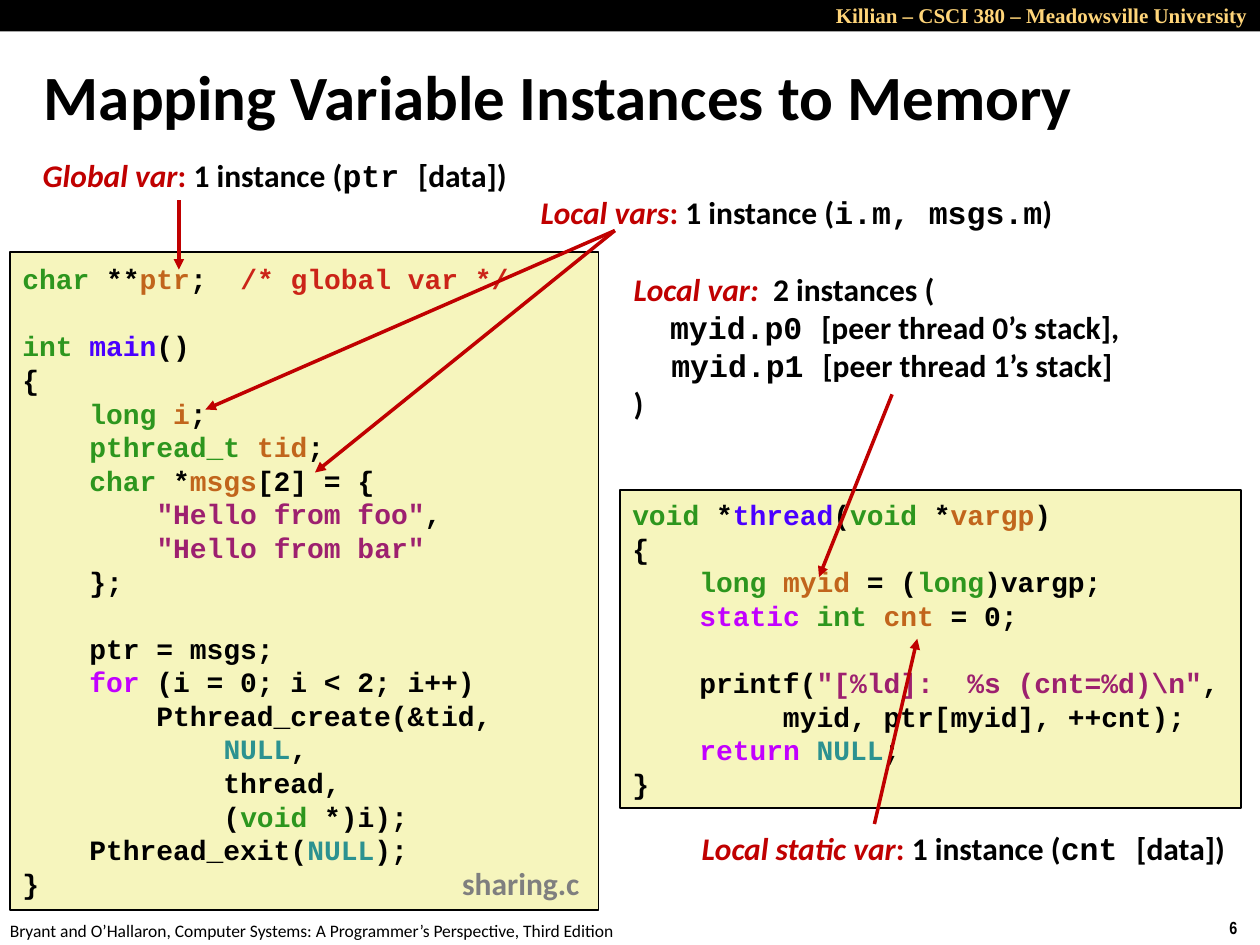
"""Build a slide that maps C variable instances to memory."""
from dataclasses import dataclass
from typing import NamedTuple

import pptx
import pptx.dml.color
import pptx.enum.shapes
import pptx.enum.text
import pptx.oxml.ns
import pptx.util
from lxml import etree

Inches = pptx.util.Inches
Pt = pptx.util.Pt
RGBColor = pptx.dml.color.RGBColor
Align = pptx.enum.text.PP_ALIGN
Anchor = pptx.enum.text.MSO_ANCHOR
qn = pptx.oxml.ns.qn

BLACK = RGBColor(0x00, 0x00, 0x00)
GOLD = RGBColor(0xFF, 0xD5, 0x79)
CREAM = RGBColor(0xF6, 0xF5, 0xBD)
RED = RGBColor(0xC0, 0x00, 0x00)
GRAY = RGBColor(0x7F, 0x7F, 0x7F)
GREEN = RGBColor(0x2D, 0x96, 0x1E)
ORANGE = RGBColor(0xC1, 0x65, 0x1C)
BRICK = RGBColor(0xCB, 0x24, 0x18)
BLUE = RGBColor(0x4A, 0x00, 0xFF)
PLUM = RGBColor(0x9D, 0x20, 0x6F)
VIOLET = RGBColor(0xC2, 0x00, 0xFF)
TEAL = RGBColor(0x2C, 0x92, 0x90)

SANS = "Calibri"
MONO = "Courier New"
CODE_SIZE = 16
CODE_PITCH = 19.2


class Run(NamedTuple):
    text: str
    color: RGBColor = BLACK
    font: str = SANS
    size: float = 18
    bold: bool = True
    slant: bool = False


class Box(NamedTuple):
    left: float
    top: float
    width: float
    height: float


@dataclass
class Line:
    runs: list[Run]
    indent: float = 0
    gap: float = 0


@dataclass
class Label:
    box: Box
    lines: list[Line]
    align: Align = Align.LEFT
    anchor: Anchor = Anchor.TOP
    pad: float = 0.05


@dataclass
class Code:
    box: Box
    lines: list[Line]


class Arrow(NamedTuple):
    x1: float
    y1: float
    x2: float
    y2: float


def code(*parts: str | tuple[str, RGBColor], gap: float = 0) -> Line:
    pairs = [(p, BLACK) if isinstance(p, str) else p for p in parts]
    return Line([Run(t, c, MONO, CODE_SIZE) for t, c in pairs], gap=gap)


def note(box: Box, name: str, start: str, var: str, end: str) -> Label:
    runs = [Run(name, RED, slant=True), Run(": ", RED), Run(start),
            Run(var, font=MONO), Run(end)]
    return Label(box, [Line(runs)], Align.CENTER, Anchor.MIDDLE, 0)


def plain(box: Box, run: Run, align: Align = Align.LEFT,
          anchor: Anchor = Anchor.TOP) -> Label:
    return Label(box, [Line([run])], align, anchor)


LABELS = [
    plain(Box(9.66, 7.23, 0.34, 0.27), Run("6", BLACK, "Arial Narrow", 10)),
    plain(Box(-0.02, 7.25, 5.08, 0.27),
          Run("Bryant and O’Hallaron, Computer Systems: A Programmer’s "
              "Perspective, Third Edition", size=10, bold=False)),
    plain(Box(4.5, -0.03, 5.5, 0.3),
          Run("Killian – CSCI 380 – Meadowsville University", GOLD,
              "Times New Roman", 12), Align.RIGHT),
    plain(Box(0.25, 0.33, 9.75, 0.85),
          Run("Mapping Variable Instances to Memory", size=36),
          anchor=Anchor.MIDDLE),
    note(Box(0.22, 1.24, 3.92, 0.3), "Global var", "1 instance (", "ptr ", "[data])"),
    note(Box(5.44, 6.58, 4.41, 0.3), "Local static var", "1 instance (", "cnt ", "[data])"),
    note(Box(4.17, 1.53, 4.3, 0.3), "Local vars", "1 instance (", "i.m, msgs.m", ")"),
    Label(Box(4.93, 2.14, 4.23, 1.21), [
        Line([Run("Local var:  ", RED, slant=True), Run("2 instances (")]),
        Line([Run("myid.p0 ", font=MONO), Run("[peer thread 0’s stack],")], 0.29),
        Line([Run("myid.p1 ", font=MONO), Run("[peer thread 1’s stack]")], 0.3),
        Line([Run(")")]),
    ], anchor=Anchor.MIDDLE, pad=0),
    plain(Box(3.57, 6.81, 1.2, 0.4), Run("sharing.c", GRAY)),
]

CODES = [
    Code(Box(0.08, 2, 4.67, 5.22), [
        code(("char", GREEN), " **", ("ptr", ORANGE), ";  ", ("/* global var */", BRICK)),
        code(("int ", GREEN), ("main", BLUE), "()", gap=CODE_PITCH),
        code("{"),
        code("    ", ("long ", GREEN), ("i", ORANGE), ";"),
        code("    ", ("pthread_t ", GREEN), ("tid", ORANGE), ";"),
        code("    ", ("char", GREEN), " *", ("msgs", ORANGE), "[2] = {"),
        code("        ", ('"Hello from foo"', PLUM), ","),
        code("        ", ('"Hello from bar"', PLUM)),
        code("    };"),
        code("    ptr = msgs;", gap=CODE_PITCH),
        code("    ", ("for", VIOLET), " (i = 0; i < 2; i++)"),
        code("        Pthread_create(&tid,"),
        code("            ", ("NULL", TEAL), ","),
        code("            thread,"),
        code("            (", ("void", GREEN), " *)i);"),
        code("    Pthread_exit(", ("NULL", TEAL), ");"),
        code("}"),
    ]),
    Code(Box(4.92, 3.89, 4.93, 2.52), [
        code(("void", GREEN), " *", ("thread", BLUE), "(", ("void", GREEN), " *",
             ("vargp", ORANGE), ")"),
        code("{"),
        code("    ", ("long ", GREEN), ("myid", ORANGE), " = (", ("long", GREEN), ")vargp;"),
        code("    ", ("static ", VIOLET), ("int ", GREEN), ("cnt", ORANGE), " = 0;"),
        code("    printf(", ('"[%ld]:  %s (cnt=%d)\\n"', PLUM), ",", gap=CODE_PITCH),
        code("         myid, ptr[myid], ++cnt);"),
        code("    ", ("return ", VIOLET), ("NULL", TEAL), ";"),
        code("}"),
    ]),
]

ARROWS = [
    Arrow(1.42, 1.59, 1.42, 2.14),
    Arrow(6.94, 6.54, 7.28, 5.07),
    Arrow(4.88, 1.83, 1.63, 3.25),
    Arrow(7.08, 3.13, 6.5, 4.58),
    Arrow(4.88, 1.83, 2.5, 3.75),
]


def write(frame, lines: list[Line], align: Align, anchor: Anchor,
          pad: float, pitch: float | None = None) -> None:
    frame.word_wrap = True
    frame.vertical_anchor = anchor
    frame.margin_left = frame.margin_right = Inches(0.1)
    frame.margin_top = frame.margin_bottom = Inches(pad)
    for i, line in enumerate(lines):
        para = frame.add_paragraph() if i else frame.paragraphs[0]
        para.alignment = align
        if pitch:
            para.line_spacing = Pt(pitch)
        if line.gap:
            para.space_before = Pt(line.gap)
        if line.indent:
            para._p.get_or_add_pPr().set("marL", str(Inches(line.indent)))
        for item in line.runs:
            run = para.add_run()
            run.text = item.text
            font = run.font
            font.name, font.size = item.font, Pt(item.size)
            font.bold, font.italic = item.bold, item.slant
            font.color.rgb = item.color


def panel(slide, box: Box, fill: RGBColor, edge: RGBColor | None = None):
    shape = slide.shapes.add_shape(
        pptx.enum.shapes.MSO_SHAPE.RECTANGLE, *map(Inches, box))
    shape.shadow.inherit = False
    shape.fill.solid()
    shape.fill.fore_color.rgb = fill
    if edge is None:
        shape.line.fill.background()
    else:
        shape.line.color.rgb = edge
        shape.line.width = Pt(1)
    return shape


def point(slide, arrow: Arrow) -> None:
    link = slide.shapes.add_connector(
        pptx.enum.shapes.MSO_CONNECTOR.STRAIGHT, *map(Inches, arrow))
    link.line.color.rgb = RED
    link.line.width = Pt(2)
    etree.SubElement(link.line._get_or_add_ln(), qn("a:tailEnd"), type="triangle")
    etree.SubElement(link._element.spPr, qn("a:effectLst"))


def main() -> None:
    deck = pptx.Presentation()
    deck.slide_width, deck.slide_height = Inches(10), Inches(7.5)
    slide = deck.slides.add_slide(deck.slide_layouts[6])
    panel(slide, Box(0, 0, 10, 0.25), BLACK)
    for item in CODES:
        shape = panel(slide, item.box, CREAM, BLACK)
        write(shape.text_frame, item.lines, Align.LEFT, Anchor.MIDDLE, 0.05, CODE_PITCH)
    for item in LABELS:
        text = slide.shapes.add_textbox(*map(Inches, item.box))
        write(text.text_frame, item.lines, item.align, item.anchor, item.pad)
    for arrow in ARROWS:
        point(slide, arrow)
    deck.save("out.pptx")


if __name__ == "__main__":
    main()
